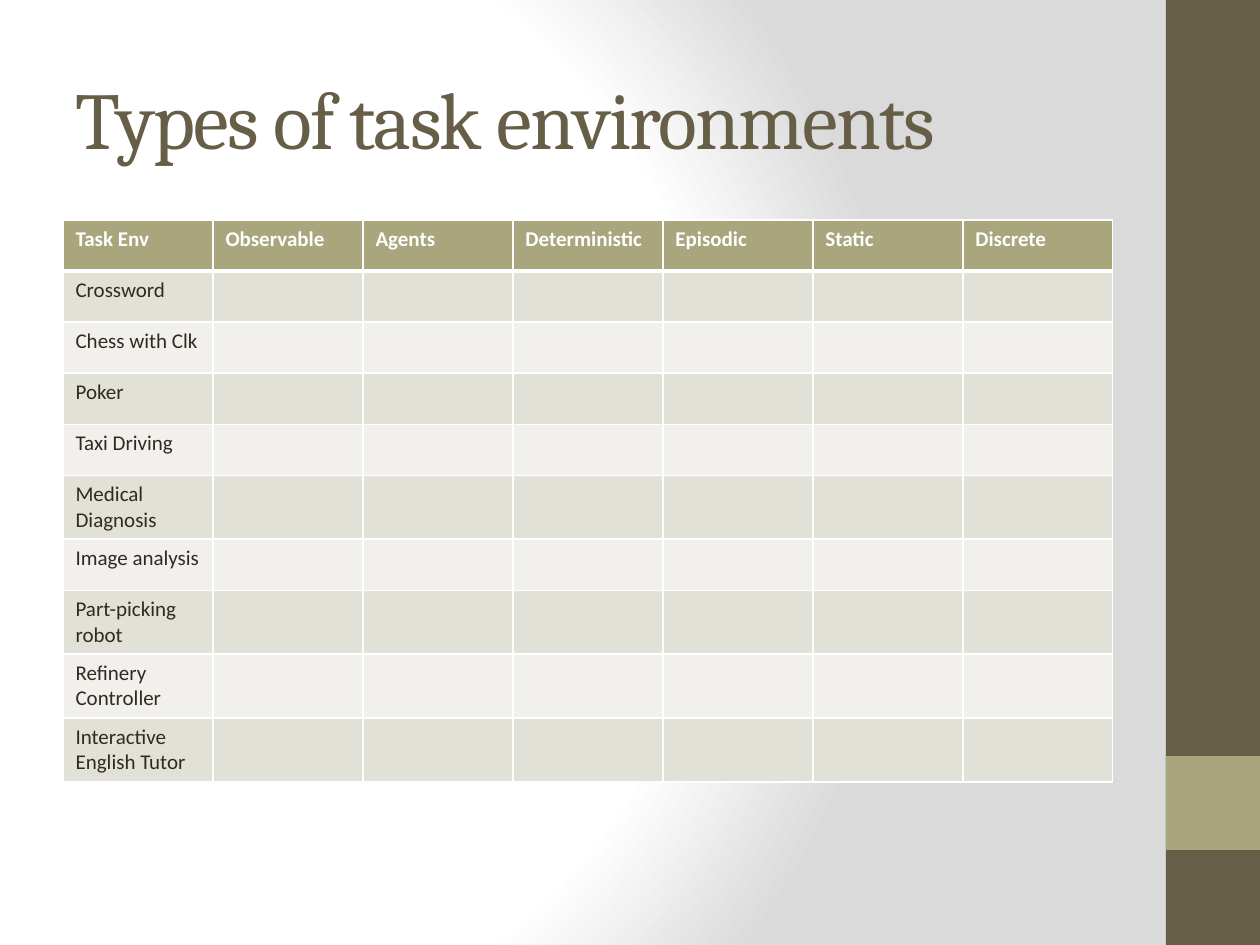
from lxml import etree
from pptx import Presentation
from pptx import util as u
from pptx.dml.color import RGBColor
from pptx.enum import shapes, text
from pptx.oxml import parse_xml
from pptx.oxml.ns import nsdecls, qn

PX = 914400 / 126

BROWN = RGBColor(0x67, 0x5E, 0x47)
OLIVE = RGBColor(0xA9, 0xA5, 0x7C)
INK = RGBColor(0x2F, 0x2B, 0x20)
WHITE = RGBColor(0xFF, 0xFF, 0xFF)
GREY = RGBColor(0xDA, 0xDA, 0xDA)
BANDS = (RGBColor(0xE2, 0xE1, 0xD7), RGBColor(0xF1, 0xF0, 0xEC))

TITLE_FONT = {"name": "Cambria", "size": u.Pt(46), "bold": False}
HEADER_FONT = {"name": "Calibri", "size": u.Pt(12), "bold": True}
TASK_FONT = {**HEADER_FONT, "bold": False}

PROPERTIES = ["Task Env", "Observable", "Agents", "Deterministic",
              "Episodic", "Static", "Discrete"]
TASKS = ["Crossword", "Chess with Clk", "Poker", "Taxi Driving",
         "Medical Diagnosis", "Image analysis", "Part-picking robot",
         "Refinery Controller", "Interactive English Tutor"]


def px(length):
    return u.Emu(round(length * PX))


def format_font(font, values, color):
    for name, value in values.items():
        setattr(font, name, value)
    font.color.rgb = color


def paint_background(slide):
    """Radial gradient spreading from the left middle of the slide."""
    fill = slide.background.fill
    fill.solid()
    stops = "".join(
        f'<a:gs pos="{pos}"><a:srgbClr val="{color}"/></a:gs>'
        for pos, color in ((0, WHITE), (75000, WHITE), (100000, GREY)))
    gradient = parse_xml(
        f'<a:gradFill {nsdecls("a")} rotWithShape="1"><a:gsLst>{stops}</a:gsLst>'
        '<a:path path="circle"><a:fillToRect l="20000" t="50000" r="100000" '
        'b="50000"/></a:path></a:gradFill>')
    solid = next(slide.element.iter(qn("a:solidFill")))
    solid.getparent().replace(solid, gradient)


def add_sidebar(slide, left, top, width, height):
    square_top = top + height * 4 // 5
    for y, h, color in ((top, height, BROWN), (square_top, width, OLIVE)):
        band = slide.shapes.add_shape(shapes.MSO_SHAPE.RECTANGLE,
                                      px(left), px(y), px(width), px(h))
        band.shadow.inherit = False
        band.fill.solid()
        band.fill.fore_color.rgb = color
        band.line.fill.background()


def place_title(slide, left, top, width, height):
    title = slide.shapes.title
    title.left, title.top, title.width, title.height = map(
        px, (left, top, width, height))
    frame = title.text_frame
    frame.word_wrap = True
    frame.vertical_anchor = text.MSO_ANCHOR.MIDDLE
    heading = frame.paragraphs[0]
    heading.alignment = text.PP_ALIGN.LEFT
    run = heading.add_run()
    run.text = "Types of task environments"
    format_font(run.font, TITLE_FONT, BROWN)
    run.font._element.set("spc", "-100")


def add_borders(cell, top_width, bottom_width):
    properties = cell._tc.get_or_add_tcPr()
    sides = {"lnL": 1, "lnR": 1, "lnT": top_width, "lnB": bottom_width}
    for index, (side, points) in enumerate(sides.items()):
        line = etree.Element(qn(f"a:{side}"), w=str(u.Pt(points)))
        solid = etree.SubElement(line, qn("a:solidFill"))
        etree.SubElement(solid, qn("a:srgbClr"), val=str(WHITE))
        properties.insert(index, line)


def add_task_table(slide, left, top, column_width, row_height):
    rows = [PROPERTIES] + [[task] + [""] * (len(PROPERTIES) - 1) for task in TASKS]
    table = slide.shapes.add_table(
        len(rows), len(PROPERTIES), px(left), px(top),
        px(column_width * len(PROPERTIES)), px(row_height * len(rows))).table
    for column in table.columns:
        column.width = px(column_width)
    for r, words in enumerate(rows):
        table.rows[r].height = px(row_height)
        is_header = r == 0
        for c, word in enumerate(words):
            cell = table.cell(r, c)
            cell.fill.solid()
            cell.fill.fore_color.rgb = OLIVE if is_header else BANDS[(r - 1) % 2]
            add_borders(cell, 3 if r == 1 else 1, 3 if is_header else 1)
            if word:
                run = cell.text_frame.paragraphs[0].add_run()
                run.text = word
                format_font(run.font, HEADER_FONT if is_header else TASK_FONT,
                            WHITE if is_header else INK)


def main():
    deck = Presentation()
    deck.slide_width, deck.slide_height = px(1260), px(945)
    slide = deck.slides.add_slide(deck.slide_layouts[5])
    paint_background(slide)
    add_sidebar(slide, 1166, 0, 94, 945)
    place_title(slide, 63, 38, 1050, 158)
    add_task_table(slide, 63, 220, 150, 51)
    deck.save("out.pptx")


if __name__ == "__main__":
    main()
